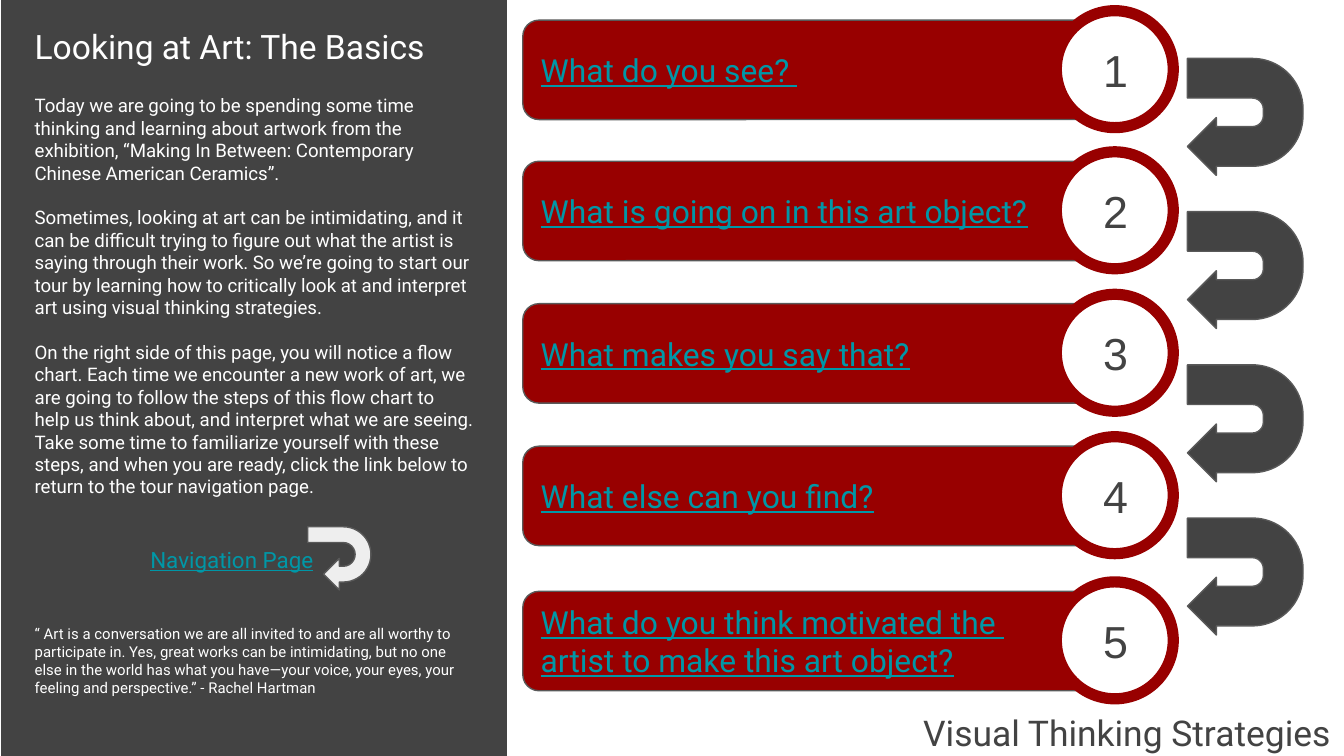
from pptx import Presentation
from pptx.dml.color import RGBColor
from pptx.enum.shapes import MSO_SHAPE
from pptx.enum.text import MSO_ANCHOR, MSO_AUTO_SIZE, PP_ALIGN
from pptx.util import Inches, Pt

RECTANGLE, ROUNDED = MSO_SHAPE.RECTANGLE, MSO_SHAPE.ROUNDED_RECTANGLE
OVAL, U_TURN = MSO_SHAPE.OVAL, MSO_SHAPE.U_TURN_ARROW
TOP, MIDDLE, BOTTOM = MSO_ANCHOR.TOP, MSO_ANCHOR.MIDDLE, MSO_ANCHOR.BOTTOM
LEFT, CENTER, RIGHT = PP_ALIGN.LEFT, PP_ALIGN.CENTER, PP_ALIGN.RIGHT
NO_AUTOFIT = MSO_AUTO_SIZE.NONE

PAGE_WIDTH = 10
PAGE_HEIGHT = PAGE_WIDTH * 9 / 16
CHARCOAL, WHITE, CRIMSON = "434343", "FFFFFF", "980000"
OUTLINE, LINK, PALE = "595959", "0097A7", "EEEEEE"

INTRO = [
    "Today we are going to be spending some time thinking and learning about artwork "
    "from the exhibition, “Making In Between: Contemporary Chinese American Ceramics”.",
    "Sometimes, looking at art can be intimidating, and it can be difficult trying to "
    "figure out what the artist is saying through their work. So we’re going to start "
    "our tour by learning how to critically look at and interpret art using visual "
    "thinking strategies.",
    "On the right side of this page, you will notice a flow chart. Each time we "
    "encounter a new work of art, we are going to follow the steps of this flow chart "
    "to help us think about, and interpret what we are seeing. Take some time to "
    "familiarize yourself with these steps, and when you are ready, click the link "
    "below to return to the tour navigation page.",
]
QUOTE = (
    "“ Art is a conversation we are all invited to and are all worthy to participate "
    "in. Yes, great works can be intimidating, but no one else in the world has what "
    "you have—your voice, your eyes, your feeling and perspective.” - Rachel Hartman"
)
STEPS = [
    (0.15, ["What do you see? "]),
    (1.2, ["What is going on in this art object?"]),
    (2.26, ["What makes you say that?"]),
    (3.32, ["What else can you find?"]),
    (4.4, ["What do you think motivated the ", "artist to make this art object?"]),
]


def color(value):
    return RGBColor.from_string(value)


def write(shape, lines, size, ink, font="Roboto", align=LEFT, anchor=TOP,
          underline=False, gap=0):
    """Fill a shape with one paragraph per line, separated by gap points."""
    frame = shape.text_frame
    frame.word_wrap = True
    frame.auto_size = NO_AUTOFIT
    frame.vertical_anchor = anchor
    frame.margin_left = frame.margin_right = Inches(0.1)
    frame.margin_top = frame.margin_bottom = Inches(0.1)
    for index, line in enumerate(lines):
        para = frame.paragraphs[0] if index == 0 else frame.add_paragraph()
        para.text = line
        para.alignment = align
        para.space_before = Pt(gap if index else 0)
        para.font.name = font
        para.font.size = Pt(size)
        para.font.color.rgb = color(ink)
        if underline:
            para.font.underline = True


def add_text(shapes, box, lines, size, ink, **style):
    write(shapes.add_textbox(*map(Inches, box)), lines, size, ink, **style)


def add_shape(shapes, kind, box, fill, line, weight=0.75, adjust=()):
    shape = shapes.add_shape(kind, *map(Inches, box))
    shape.shadow.inherit = False
    shape.fill.solid()
    shape.fill.fore_color.rgb = color(fill)
    shape.line.color.rgb = color(line)
    shape.line.width = Pt(weight)
    for index, value in enumerate(adjust):
        shape.adjustments[index] = value
    return shape


def add_return_arrow(shapes, box, fill, thickness, reach):
    arrow = add_shape(shapes, U_TURN, box, fill, OUTLINE,
                      adjust=(thickness, 0.25, 0.25, 0.438, reach))
    arrow.rotation = 90


def add_strategy_title(page, box):
    title = page.shapes.title
    title.left, title.top, title.width, title.height = map(Inches, box)
    write(title, ["Visual Thinking Strategies"], 19, CHARCOAL, align=RIGHT, anchor=BOTTOM)


def add_intro_panel(page, box):
    left, top, width, height = box
    shapes = page.shapes
    add_shape(shapes, RECTANGLE, box, CHARCOAL, CHARCOAL)
    text_left, text_width = left + 0.15, width - 0.3
    add_text(shapes, (text_left, top + 0.09, text_width, 0.51),
             ["Looking at Art: The Basics"], 18, WHITE)
    add_text(shapes, (text_left, top + 0.6, text_width, 3.13), INTRO, 10, WHITE, gap=12)
    add_text(shapes, (text_left, top + 4.55, text_width, 0.79), [QUOTE], 8, WHITE)

    navigation = shapes.add_group_shape().shapes
    add_return_arrow(navigation, (left + 2.28, top + 3.92, 0.47, 0.47), PALE, 0.25, 0.75)
    add_text(navigation, (left + 1.01, top + 3.96, 1.6, 0.38),
             ["Navigation Page"], 12, LINK, underline=True)


def add_step(page, box, number, question):
    left, top, width, height = box
    shapes = page.shapes
    bar = add_shape(shapes, ROUNDED, box, CRIMSON, OUTLINE, adjust=(0.163,))
    write(bar, question, 17, LINK, anchor=MIDDLE, underline=True)
    add_shape(shapes, OVAL, (left + 3.97, top - 0.07, 0.87, 0.87), WHITE, CRIMSON, 6)
    add_text(shapes, (left + 4.16, top + 0.15, 0.5, 0.43), [str(number)], 24, CHARCOAL,
             font="Arial", align=CENTER, anchor=MIDDLE)


def add_flow_chart(page, left, top):
    for number, (offset, question) in enumerate(STEPS, start=1):
        add_step(page, (left, top + offset, 4.66, 0.74), number, question)
    for index in range(len(STEPS) - 1):
        arrow_box = (left + 4.94, top + 0.44 + 1.14 * index, 0.87, 0.86)
        add_return_arrow(page.shapes, arrow_box, CHARCOAL, 0.343, 1)


def main():
    deck = Presentation()
    deck.slide_width, deck.slide_height = Inches(PAGE_WIDTH), Inches(PAGE_HEIGHT)
    title_only = deck.slide_layouts[5]
    page = deck.slides.add_slide(title_only)
    add_strategy_title(page, (5.44, 5.18, 4.56, 0.53))
    add_intro_panel(page, (0.01, 0, 3.76, PAGE_HEIGHT))
    add_flow_chart(page, 3.89, 0)
    deck.save("out.pptx")


if __name__ == "__main__":
    main()
